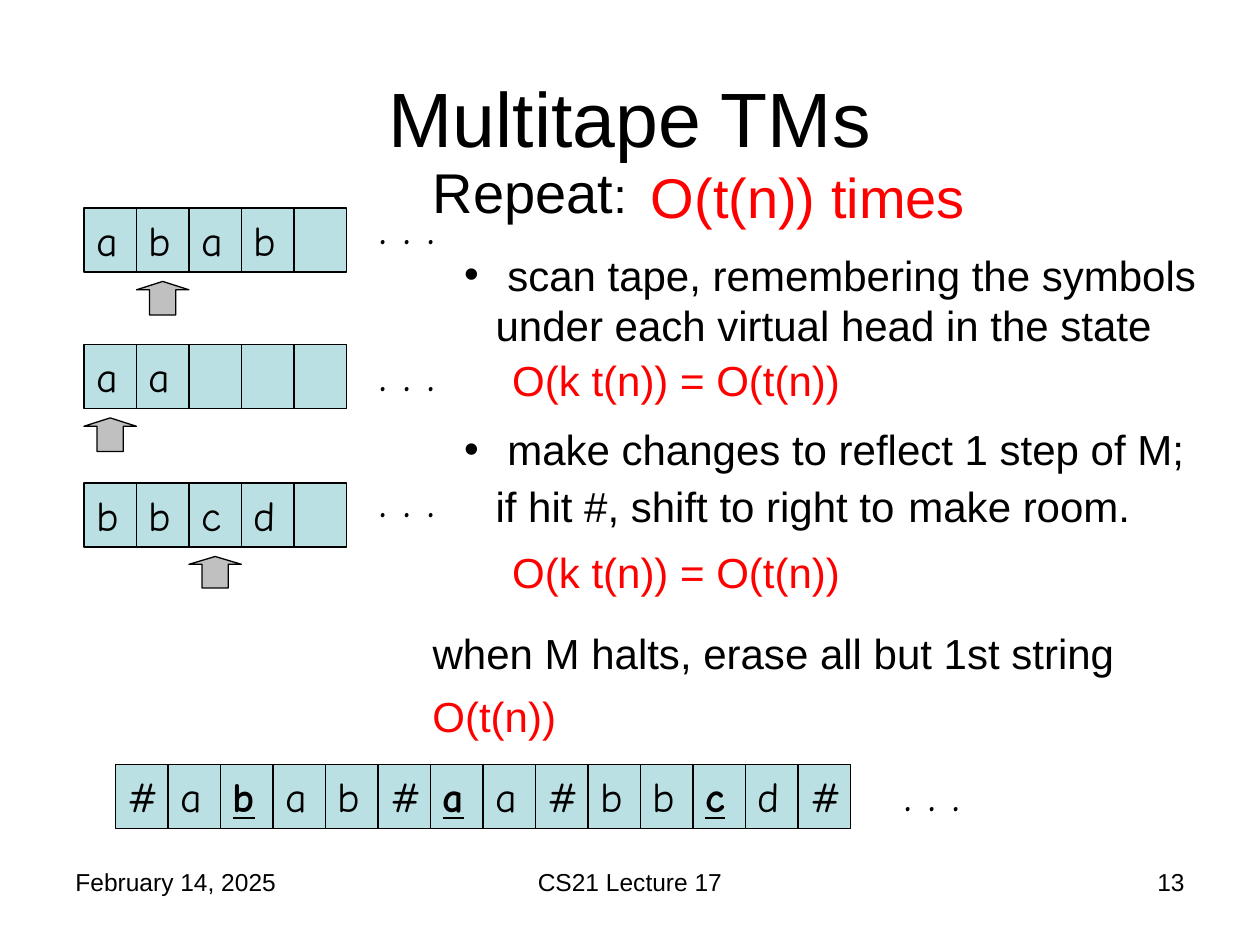
from dataclasses import dataclass

from lxml import etree
from pptx import Presentation, util as u
from pptx.dml.color import RGBColor
from pptx.enum import shapes, text
from pptx.oxml.ns import qn

PX = 7620  # EMU in one px, 120 px to the inch
CELL_W, CELL_H = 50, 61


@dataclass(frozen=True)
class Theme:
    ink: str = "000000"
    cost: str = "FF0000"
    cell: str = "BBE0E3"
    head: str = "C0C0C0"
    sans: str = "Arial"
    hand: str = "Comic Neue"
    title: int = 44
    lead: int = 32
    dots: int = 28
    body: int = 24
    footer: int = 14


class Deck:
    def __init__(self, theme):
        self.theme = theme
        self.prs = Presentation()
        self.prs.slide_width, self.prs.slide_height = 1200 * PX, 900 * PX
        self.slide = self.prs.slides.add_slide(self.prs.slide_layouts[1])

    def font(self, font, size, name=None, color=None):
        font.size = u.Pt(size)
        font.name = name or self.theme.sans
        font.color.rgb = RGBColor.from_string(color or self.theme.ink)

    def place(self, holder, x, y, w, h):
        holder.left, holder.top = x * PX, y * PX
        holder.width, holder.height = w * PX, h * PX

    def title(self, words, *box):
        holder = self.slide.shapes.title
        self.place(holder, *box)
        holder.text_frame.text = words
        self.font(holder.text_frame.paragraphs[0].font, self.theme.title)

    def body(self, items, *box):
        """Fill the body with (runs, space before, bulleted); runs are (words, size)."""
        holder = self.slide.placeholders[1]
        self.place(holder, *box)
        frame = holder.text_frame
        frame.auto_size = text.MSO_AUTO_SIZE.NONE
        for i, (runs, before, bulleted) in enumerate(items):
            line = frame.paragraphs[0] if i == 0 else frame.add_paragraph()
            line.space_before = u.Pt(before)
            for words, size in runs:
                run = line.add_run()
                run.text = words
                self.font(run.font, size)
            props = line._p.get_or_add_pPr()
            props.set("marL", str(60 * PX if bulleted else 0))
            props.set("indent", str(-30 * PX if bulleted else 0))
            if bulleted:
                line.level = 1
                etree.SubElement(props, qn("a:buFont"), typeface=self.theme.sans)
                etree.SubElement(props, qn("a:buChar"), char="•")
            else:
                etree.SubElement(props, qn("a:buNone"))

    def label(self, words, x, y, w, h, size, name=None, color=None,
              align=text.PP_ALIGN.LEFT):
        box = self.slide.shapes.add_textbox(x * PX, y * PX, w * PX, h * PX)
        box.text_frame.word_wrap = True
        line = box.text_frame.paragraphs[0]
        line.text, line.alignment = words, align
        self.font(line.font, size, name, color)

    def shape(self, kind, fill, x, y, w, h):
        item = self.slide.shapes.add_shape(kind, x * PX, y * PX, w * PX, h * PX)
        item.shadow.inherit = False
        item.fill.solid()
        item.fill.fore_color.rgb = RGBColor.from_string(fill)
        item.line.color.rgb = RGBColor.from_string(self.theme.ink)
        item.line.width = u.Pt(0.75)
        return item

    def tape(self, symbols, x, y, marked=()):
        """Draw one cell per symbol; marked cells hold a virtual head."""
        for i, symbol in enumerate(symbols):
            cell = self.shape(shapes.MSO_SHAPE.RECTANGLE, self.theme.cell,
                              x + i * CELL_W, y, CELL_W, CELL_H)
            if symbol == " ":
                continue
            frame = cell.text_frame
            frame.word_wrap = True
            frame.vertical_anchor = text.MSO_ANCHOR.TOP
            line = frame.paragraphs[0]
            line.text, line.alignment = symbol, text.PP_ALIGN.LEFT
            self.font(line.font, self.theme.body, self.theme.hand)
            if i in marked:
                line.font.bold = line.font.underline = True

    def head(self, x, y, h):
        self.shape(shapes.MSO_SHAPE.UP_ARROW, self.theme.head, x, y, CELL_W, h
                   ).adjustments[1] = 0.25

    def dots(self, x, y, w):
        self.label(". . .", x, y, w, 68, self.theme.dots, self.theme.hand)


def main():
    theme = Theme()
    deck = Deck(theme)

    for words, x, w, align in (
            ("February 14, 2025", 60, 280, text.PP_ALIGN.LEFT),
            ("CS21 Lecture 17", 410, 380, text.PP_ALIGN.CENTER),
            ("13", 860, 280, text.PP_ALIGN.RIGHT)):
        deck.label(words, x, 820, w, 62, theme.footer, align=align)

    deck.title("Multitape TMs", 60, 36, 1080, 150)

    for symbols, y, head_cell, head_h, dots_y in (
            ("abab ", 198, 1, 32, 180),
            ("aa   ", 328, 0, 32, 320),
            ("bbcd ", 460, 2, 30, 440)):
        deck.tape(symbols, 80, y)
        deck.head(80 + head_cell * CELL_W, y + 70, head_h)
        deck.dots(350, dots_y, 190)

    deck.tape("#abab#aa#bbcd#", 110, 728, marked=(2, 6, 11))
    deck.dots(850, 720, 110)

    deck.body([
        ([("Repeat", theme.lead), (":", theme.dots)], 0, False),
        ([(" scan tape, remembering the symbols under each virtual head"
           " in the state", theme.body)], 14, True),
        ([(" make changes to reflect 1 step of M; if hit #, shift to right to",
           theme.body), (" ", theme.dots), ("make room.", theme.body)], 42, True),
        ([("when M halts, erase all but 1st string", theme.body)], 54, False),
    ], 400, 144, 770, 521)

    for cost, x, y, w, h, size in (
            ("O(t(n)) times", 608, 149, 400, 77, theme.lead),
            ("O(k t(n)) = O(t(n))", 476, 332, 378, 61, theme.body),
            ("O(k t(n)) = O(t(n))", 476, 515, 378, 60, theme.body),
            ("O(t(n))", 400, 652, 378, 61, theme.body)):
        deck.label(cost, x, y, w, h, size, color=theme.cost)

    deck.prs.save("out.pptx")


if __name__ == "__main__":
    main()
